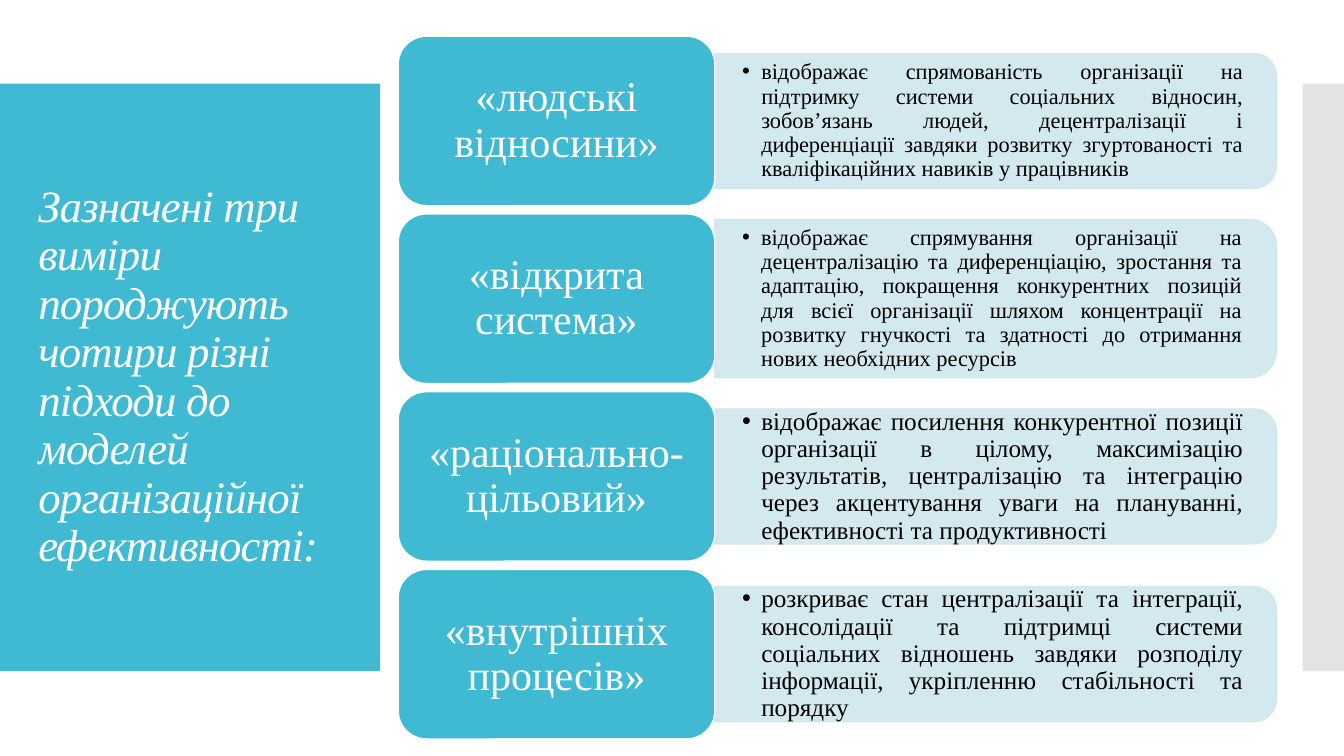
"""Build a slide with four approaches to models of organisational effectiveness."""
from dataclasses import dataclass

from lxml.etree import SubElement
from pptx import Presentation
from pptx.dml.color import RGBColor
from pptx.enum.shapes import MSO_SHAPE
from pptx.enum.text import MSO_ANCHOR, MSO_AUTO_SIZE, PP_ALIGN
from pptx.oxml.ns import qn
from pptx.util import Inches, Pt

FONT = "Times New Roman"
TEAL, PALE, GREY, WHITE, BLACK = "40BAD2", "CFE7EE", "C8C8C8", "FFFFFF", "000000"
FIRST_CENTER, LAST_CENTER = 1.2, 6.49
LABEL_LEFT, LABEL_WIDTH, LABEL_HEIGHT = 3.95, 3.14, 1.68
BAR_LEFT, BAR_WIDTH = LABEL_LEFT + LABEL_WIDTH, 5.57
BULLET_INDENT = 0.19


@dataclass
class Approach:
    label: str
    description: str
    size: int = 18
    bar_height: float = 1.34
    text_height: float = 1.21
    text_width: float = 5.51


APPROACHES = [
    Approach(
        "«людські відносини»",
        "відображає спрямованість організації на підтримку системи соціальних відносин, "
        "зобов’язань людей, децентралізації і диференціації завдяки розвитку згуртованості "
        "та кваліфікаційних навиків у працівників",
        size=16,
    ),
    Approach(
        "«відкрита система»",
        "відображає спрямування організації на децентралізацію та диференціацію, зростання "
        "та адаптацію, покращення конкурентних позицій для всієї організації шляхом "
        "концентрації на розвитку гнучкості та здатності до отримання нових необхідних ресурсів ",
        size=16, bar_height=1.57, text_height=1.42, text_width=5.5,
    ),
    Approach(
        "«раціонально-цільовий»",
        "відображає посилення конкурентної позиції організації в цілому, максимізацію "
        "результатів, централізацію та інтеграцію через акцентування уваги на плануванні, "
        "ефективності та продуктивності",
    ),
    Approach(
        "«внутрішніх процесів»",
        "розкриває стан централізації та інтеграції, консолідації та підтримці системи "
        "соціальних відношень завдяки розподілу інформації, укріпленню стабільності та порядку",
    ),
]


def rgb(color: str) -> RGBColor:
    """Turn a hex string into a colour."""
    return RGBColor.from_string(color)


def set_fill(fill, color: str, opacity: int) -> None:
    """Give a fill a solid colour with an opacity in percent."""
    fill.solid()
    fill.fore_color.rgb = rgb(color)
    if opacity < 100:
        for tint in fill._xPr.iter(qn("a:srgbClr")):
            if tint.find(qn("a:alpha")) is None:
                SubElement(tint, qn("a:alpha"), val=str(opacity * 1000))


def add_block(slide, kind, left: float, top: float, width: float, height: float,
              fill: str, line: str = "", opacity: int = 100):
    """Draw a filled preset shape, outlined when a line colour is given."""
    block = slide.shapes.add_shape(kind, Inches(left), Inches(top), Inches(width), Inches(height))
    block.shadow.inherit = False
    set_fill(block.fill, fill, opacity)
    if line:
        set_fill(block.line.fill, line, opacity)
        block.line.width = Pt(0.85)
    else:
        block.line.fill.background()
    return block


def prepare_frame(frame, side: float, end: float) -> None:
    """Wrap and centre a frame vertically with the given insets."""
    frame.word_wrap = True
    frame.auto_size = MSO_AUTO_SIZE.NONE
    frame.vertical_anchor = MSO_ANCHOR.MIDDLE
    frame.margin_left = frame.margin_right = Inches(side)
    frame.margin_top = frame.margin_bottom = Inches(end)


def add_text(paragraph, text: str, size: int, color: str, align):
    """Add one formatted run and return it."""
    paragraph.alignment = align
    paragraph.line_spacing = 0.9
    run = paragraph.add_run()
    run.text = text
    run.font.name = FONT
    run.font.size = Pt(size)
    run.font.color.rgb = rgb(color)
    return run


def add_bullet(paragraph) -> None:
    """Give a paragraph a hanging round bullet."""
    properties = paragraph._p.get_or_add_pPr()
    properties.set("marL", str(Inches(BULLET_INDENT)))
    properties.set("indent", str(-Inches(BULLET_INDENT)))
    SubElement(properties, qn("a:buFont"), typeface="Arial")
    SubElement(properties, qn("a:buChar"), char="•")


def add_title(slide) -> None:
    """Draw the side panels and set the title on the left one."""
    panel = add_block(slide, MSO_SHAPE.RECTANGLE, 0, 0.83, 3.77, 5.83, TEAL)
    add_block(slide, MSO_SHAPE.RECTANGLE, 12.92, 0.83, 0.42, 5.83, GREY, opacity=50)
    title = slide.shapes.title
    panel.element.addnext(title.element)
    title.left, title.top = Inches(0.28), Inches(1.23)
    title.width, title.height = Inches(3.22), Inches(5.03)
    prepare_frame(title.text_frame, 0.1, 0.05)
    paragraph = title.text_frame.paragraphs[0]
    lines = ("Зазначені три виміри породжують чотири різні підходи до моделей",
             "організаційної ефективності:")
    for index, line in enumerate(lines):
        if index:
            paragraph.add_line_break()
        run = add_text(paragraph, line, 32, WHITE, PP_ALIGN.LEFT)
        run.font.italic = True
        run.font._element.set("spc", "-60")


def add_approach(slide, approach: Approach, center: float) -> None:
    """Draw one approach: its bar, description and label."""
    bar = add_block(slide, MSO_SHAPE.ROUND_2_SAME_RECTANGLE,
                    BAR_LEFT + (BAR_WIDTH - approach.bar_height) / 2, center - BAR_WIDTH / 2,
                    approach.bar_height, BAR_WIDTH, PALE, PALE, 90)
    bar.rotation = 90

    description = slide.shapes.add_textbox(
        Inches(BAR_LEFT), Inches(center - approach.text_height / 2),
        Inches(approach.text_width), Inches(approach.text_height)).text_frame
    prepare_frame(description, 0.27, 0.14)
    paragraph = description.paragraphs[0]
    paragraph.level = 1
    add_text(paragraph, approach.description, approach.size, BLACK, PP_ALIGN.JUSTIFY)
    add_bullet(paragraph)

    label = add_block(slide, MSO_SHAPE.ROUNDED_RECTANGLE, LABEL_LEFT, center - LABEL_HEIGHT / 2,
                      LABEL_WIDTH, LABEL_HEIGHT, TEAL, WHITE).text_frame
    prepare_frame(label, 0.2, 0.14)
    add_text(label.paragraphs[0], approach.label, 30, WHITE, PP_ALIGN.CENTER)


def main() -> None:
    """Build and save the presentation."""
    presentation = Presentation()
    presentation.slide_width, presentation.slide_height = Inches(13.33), Inches(7.5)
    slide = presentation.slides.add_slide(presentation.slide_layouts.get_by_name("Title Only"))
    add_title(slide)
    pitch = (LAST_CENTER - FIRST_CENTER) / (len(APPROACHES) - 1)
    for row, approach in enumerate(APPROACHES):
        add_approach(slide, approach, FIRST_CENTER + row * pitch)
    presentation.save("out.pptx")


if __name__ == "__main__":
    main()
